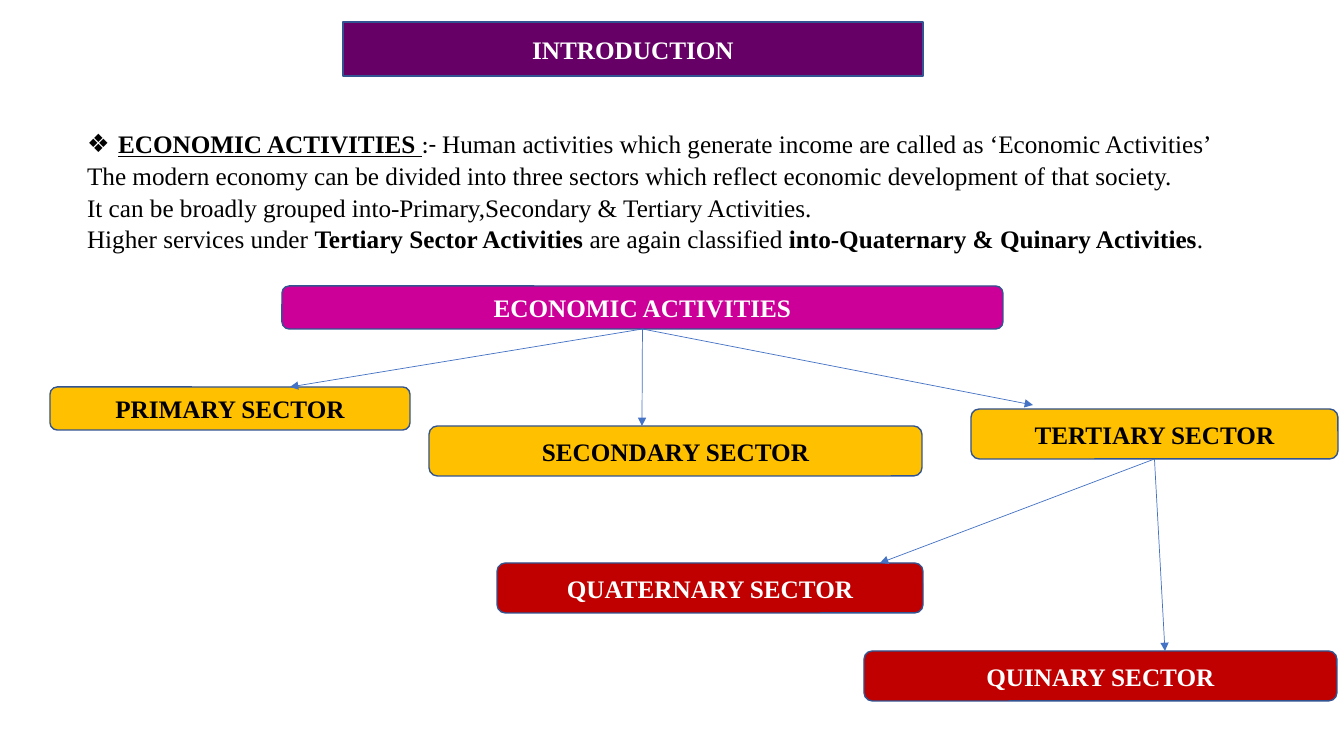
"""Build the slide that introduces the sectors of economic activity."""
from lxml.etree import SubElement
from pptx import Presentation
from pptx.dml.color import RGBColor
from pptx.enum.shapes import MSO_CONNECTOR as CONNECTOR, MSO_SHAPE as SHAPE
from pptx.enum.text import MSO_ANCHOR as ANCHOR, MSO_AUTO_SIZE as AUTO_SIZE, PP_ALIGN as ALIGN
from pptx.oxml.ns import qn
from pptx.util import Emu, Pt

PX = 914400 / 100.8
FONT = "Times New Roman"
COLORS = {
    "purple": "660066", "magenta": "CC0099", "gold": "FFC000", "red": "C00000",
    "outline": "325491", "arrow": "4472C4", "white": "FFFFFF", "black": "000000",
}

TITLE = ("INTRODUCTION", (343, 22, 580, 54), "purple", "white")
BOXES = {
    "economic": ("ECONOMIC ACTIVITIES", (282, 286, 721, 43), "magenta", "white"),
    "primary": ("PRIMARY SECTOR", (50, 387, 360, 43), "gold", "black"),
    "secondary": ("SECONDARY SECTOR", (429, 426, 493, 50), "gold", "black"),
    "tertiary": ("TERTIARY SECTOR", (971, 409, 367, 50), "gold", "black"),
    "quaternary": ("QUATERNARY SECTOR", (497, 563, 426, 50), "red", "white"),
    "quinary": ("QUINARY SECTOR", (864, 651, 473, 50), "red", "white"),
}
ARROWS = [
    ("economic", (290, 387)),
    ("economic", (642, 426)),
    ("economic", (1033, 405)),
    ("tertiary", (880, 563)),
    ("tertiary", (1165, 651)),
]
BODY_AREA = (77, 122, 1190, 132)
BULLET_INDENT = 31
BODY = [
    [("ECONOMIC ACTIVITIES ", "heading"), (":- ", "separator"),
     ("Human activities which generate income are called as ‘Economic Activities’", "plain")],
    [("The modern economy can be divided into three sectors which reflect "
      "economic development of that society.", "plain")],
    [("It can be broadly grouped into-Primary,Secondary & Tertiary Activities.", "plain")],
    [("Higher services under ", "plain"), ("Tertiary Sector Activities ", "bold"),
     ("are again classified ", "plain"), ("into-Quaternary & Quinary Activities", "bold"),
     (".", "plain")],
]


def px(value):
    return Emu(round(value * PX))


def color(name):
    return RGBColor.from_string(COLORS[name])


def place(shape, area):
    shape.left, shape.top, shape.width, shape.height = map(px, area)


def format_box(shape, text, fill, text_color):
    shape.fill.solid()
    shape.fill.fore_color.rgb = color(fill)
    shape.line.color.rgb = color("outline")
    shape.line.width = Pt(1)
    frame = shape.text_frame
    frame.text = text
    frame.word_wrap = True
    frame.auto_size = AUTO_SIZE.NONE
    frame.vertical_anchor = ANCHOR.MIDDLE
    paragraph = frame.paragraphs[0]
    paragraph.alignment = ALIGN.CENTER
    font = paragraph.font
    font.name, font.size, font.bold = FONT, Pt(18), True
    font.color.rgb = color(text_color)


def add_title(slide):
    text, area, fill, text_color = TITLE
    title = slide.shapes.title
    place(title, area)
    geometry = SubElement(title.element.spPr, qn("a:prstGeom"), prst="roundRect")
    SubElement(geometry, qn("a:avLst"))
    format_box(title, text, fill, text_color)


def add_box(slide, text, area, fill, text_color):
    box = slide.shapes.add_shape(SHAPE.ROUNDED_RECTANGLE, *map(px, area))
    box.shadow.inherit = False
    format_box(box, text, fill, text_color)
    return box


def add_arrow(slide, source, end):
    arrow = slide.shapes.add_connector(CONNECTOR.STRAIGHT, 0, 0, *map(px, end))
    arrow.begin_connect(source, 2)
    arrow.line.color.rgb = color("arrow")
    arrow.line.width = Pt(0.5)
    SubElement(arrow.line._get_or_add_ln(), qn("a:tailEnd"), type="triangle")
    SubElement(arrow._element.spPr, qn("a:effectLst"))


def add_body(slide):
    body = slide.placeholders[1]
    place(body, BODY_AREA)
    frame = body.text_frame
    frame.word_wrap = True
    frame.auto_size = AUTO_SIZE.SHAPE_TO_FIT_TEXT
    frame.vertical_anchor = ANCHOR.TOP
    for index, runs in enumerate(BODY):
        paragraph = frame.add_paragraph() if index else frame.paragraphs[0]
        paragraph.space_before = Pt(0)
        paragraph.line_spacing = 1.05
        paragraph.font.size = Pt(18)
        paragraph.font.color.rgb = color("black")
        properties = paragraph._p.get_or_add_pPr()
        indent = 0 if index else px(BULLET_INDENT)
        properties.set("marL", str(indent))
        properties.set("indent", str(-indent))
        if index:
            bullet = properties.makeelement(qn("a:buNone"), {})
        else:
            bullet = properties.makeelement(qn("a:buChar"), {"char": "❖"})
        properties.find(qn("a:defRPr")).addprevious(bullet)
        for text, style in runs:
            run = paragraph.add_run()
            run.text = text
            run.font.name = "Calibri" if style == "separator" else FONT
            run.font.bold = style in ("heading", "bold")
            run.font.underline = style == "heading"


def main():
    presentation = Presentation()
    presentation.slide_width, presentation.slide_height = px(1344), px(756)
    slide = presentation.slides.add_slide(presentation.slide_layouts[1])
    add_title(slide)
    add_body(slide)
    boxes = {name: add_box(slide, *box) for name, box in BOXES.items()}
    for source, end in ARROWS:
        add_arrow(slide, boxes[source], end)
    presentation.save("out.pptx")


if __name__ == "__main__":
    main()
